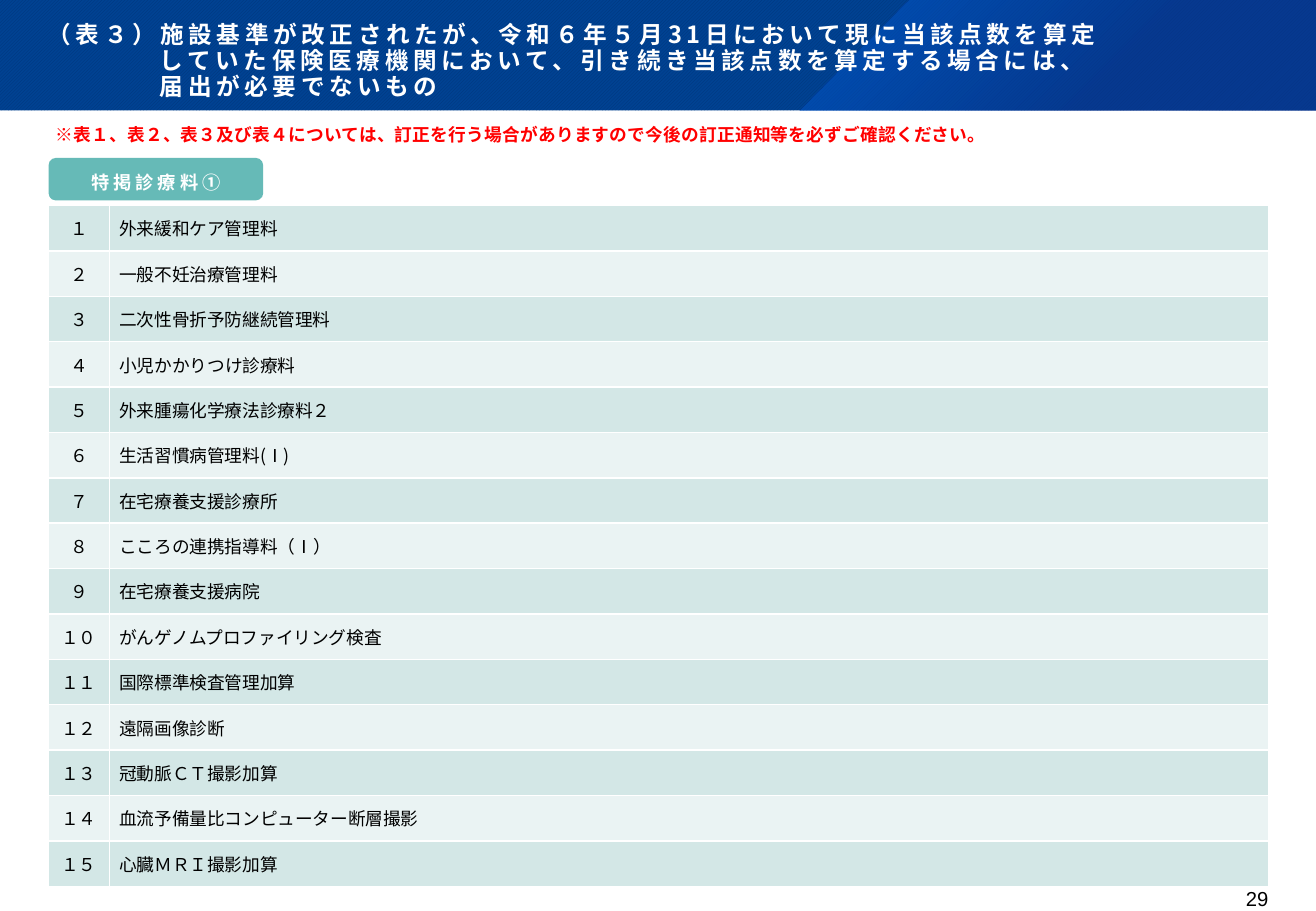
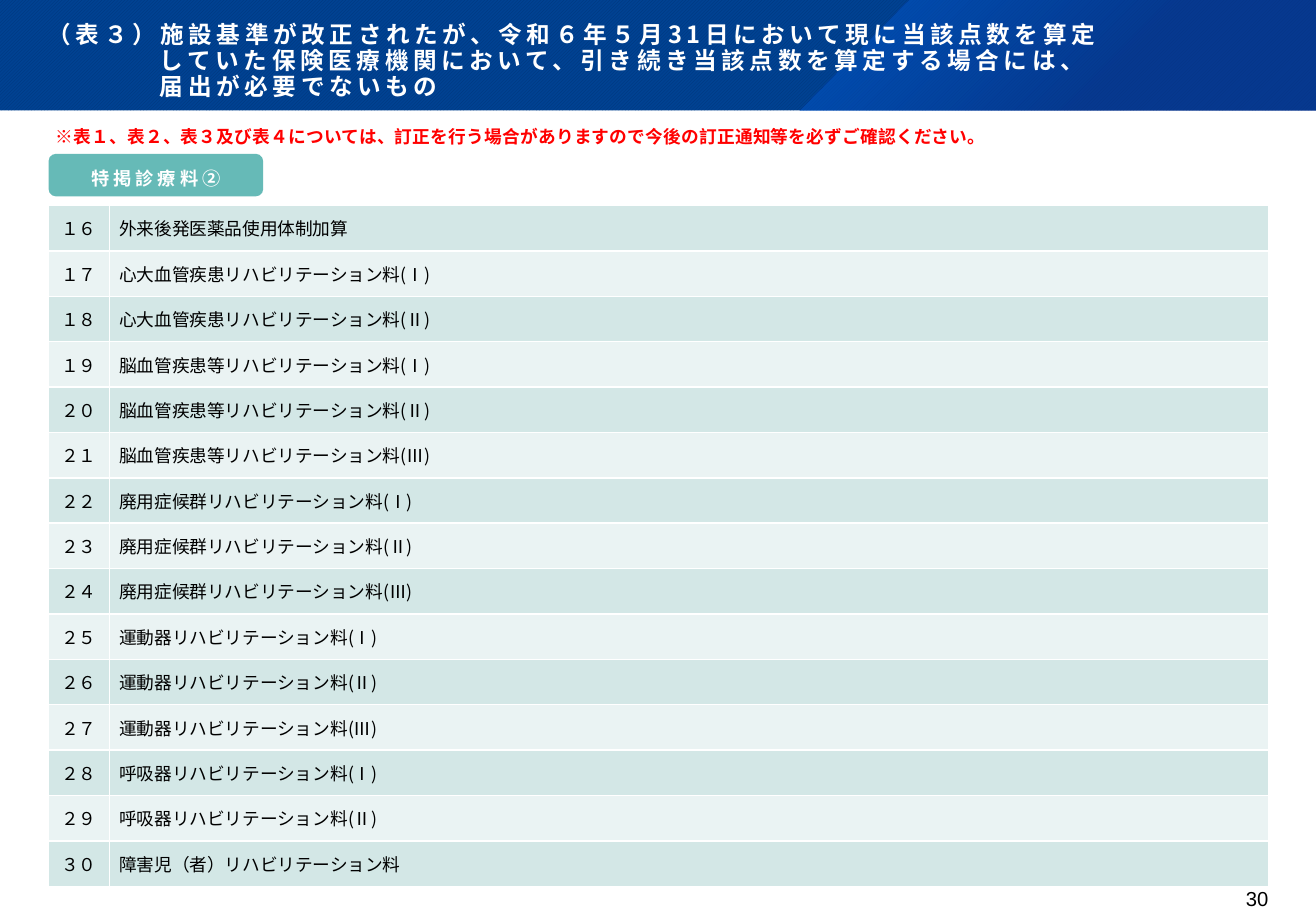
from lxml import etree
from pptx import Presentation
from pptx.dml.color import RGBColor
from pptx.enum.dml import MSO_PATTERN
from pptx.enum.shapes import MSO_SHAPE
from pptx.enum.text import MSO_ANCHOR, MSO_AUTO_SIZE, PP_ALIGN
from pptx.oxml import parse_xml
from pptx.oxml.ns import qn
from pptx.util import Pt

PX = 7620  # 120 px to the inch
WIDTH, HEIGHT, BAND_HEIGHT = 1300, 900, 109
MARGIN = 48

WHITE = RGBColor(0xFF, 0xFF, 0xFF)
BLACK = RGBColor(0, 0, 0)
RED = RGBColor(0xFF, 0, 0)
NAVY = RGBColor(0x00, 0x35, 0x79)
BLUE = RGBColor(0x00, 0x42, 0x92)
TEAL = RGBColor(0x66, 0xBA, 0xB7)
ROW_FILLS = [RGBColor(0xD3, 0xE7, 0xE6), RGBColor(0xEA, 0xF3, 0xF3)]

KARLA, NOTO, ARIAL = "Karla", "Noto Sans CJK JP", "Arial"
LEFT, CENTER, RIGHT, JUSTIFY = PP_ALIGN.LEFT, PP_ALIGN.CENTER, PP_ALIGN.RIGHT, PP_ALIGN.JUSTIFY
MIDDLE, BOTTOM = MSO_ANCHOR.MIDDLE, MSO_ANCHOR.BOTTOM
DRAWING = "http://schemas.openxmlformats.org/drawingml/2006/main"
FULL_WIDTH = str.maketrans("0123456789", "０１２３４５６７８９")

TITLE_LINES = [
    ["（表３）施設基準が改正されたが、令和６年５月", "31", "日において現に当該点数を算定"],
    ["していた保険医療機関において、引き続き当該点数を算定する場合には、"],
    ["届出が必要でないもの"],
]
NOTE = "※表１、表２、表３及び表４については、訂正を行う場合がありますので今後の訂正通知等を必ずご確認ください。"

# A bar divides a fee's name from its grade
PAGES = [
    dict(number=29, label="特掲診療料①", label_top=156, note_top=118, first=1, fees=[
        "外来緩和ケア管理料",
        "一般不妊治療管理料",
        "二次性骨折予防継続管理料",
        "小児かかりつけ診療料",
        "外来腫瘍化学療法診療料２",
        "生活習慣病管理料|(Ⅰ)",
        "在宅療養支援診療所",
        "こころの連携指導料|（Ⅰ）",
        "在宅療養支援病院",
        "がんゲノムプロファイリング検査",
        "国際標準検査管理加算",
        "遠隔画像診断",
        "冠動脈ＣＴ撮影加算",
        "血流予備量比コンピューター断層撮影",
        "心臓ＭＲＩ撮影加算",
    ]),
    dict(number=30, label="特掲診療料②", label_top=152, note_top=120, first=16, fees=[
        "外来後発医薬品使用体制加算",
        "心大血管疾患リハビリテーション料|(Ⅰ)",
        "心大血管疾患リハビリテーション料|(Ⅱ)",
        "脳血管疾患等リハビリテーション料|(Ⅰ)",
        "脳血管疾患等リハビリテーション料|(Ⅱ)",
        "脳血管疾患等リハビリテーション料|(Ⅲ)",
        "廃用症候群リハビリテーション料|(Ⅰ)",
        "廃用症候群リハビリテーション料|(Ⅱ)",
        "廃用症候群リハビリテーション料|(Ⅲ)",
        "運動器リハビリテーション料|(Ⅰ)",
        "運動器リハビリテーション料|(Ⅱ)",
        "運動器リハビリテーション料|(Ⅲ)",
        "呼吸器リハビリテーション料|(Ⅰ)",
        "呼吸器リハビリテーション料|(Ⅱ)",
        "障害児（者）リハビリテーション料",
    ]),
]


def add_span(para, text, font, size, color, bold=False, spacing=0):
    span = para.add_run()
    span.text = text
    span.font.name, span.font.size, span.font.bold = font, Pt(size), bold
    span.font.color.rgb = color
    properties = span.font._element
    if spacing:
        properties.set("spc", str(round(spacing * 100)))
    etree.SubElement(properties, qn("a:ea")).set("typeface", NOTO)


def set_margins(frame, left, top, right, bottom):
    frame.margin_left, frame.margin_top = left * PX, top * PX
    frame.margin_right, frame.margin_bottom = right * PX, bottom * PX


deck = Presentation()
deck.slide_width, deck.slide_height = WIDTH * PX, HEIGHT * PX
layout = deck.slide_layouts[5]
pages = [deck.slides.add_slide(layout) for _ in PAGES]

# Shared title place
title = layout.placeholders[0]
title.left, title.top, title.width, title.height = 0, 0, WIDTH * PX, BAND_HEIGHT * PX
title.text_frame.vertical_anchor = BOTTOM
title.text_frame.auto_size = MSO_AUTO_SIZE.NONE
set_margins(title.text_frame, 47, 43, 43, 10)

# Shared band with its slanted wedge, drawn once and moved to the layout
shapes = pages[0].shapes
band = shapes.add_shape(MSO_SHAPE.RECTANGLE, 0, 0, WIDTH * PX, BAND_HEIGHT * PX)
band.fill.patterned()
band.fill.pattern = MSO_PATTERN.DARK_UPWARD_DIAGONAL
band.fill.fore_color.rgb, band.fill.back_color.rgb = NAVY, BLUE

outline = shapes.build_freeform(899, 0, scale=PX)
outline.add_line_segments([(WIDTH, 0), (WIDTH, BAND_HEIGHT), (790, BAND_HEIGHT)])
wedge = outline.convert_to_shape()
wedge.element.spPr.find(qn("a:custGeom")).addnext(parse_xml(
    f'<a:gradFill xmlns:a="{DRAWING}" rotWithShape="1"><a:gsLst>'
    '<a:gs pos="0"><a:srgbClr val="0064DF"><a:alpha val="50000"/></a:srgbClr></a:gs>'
    '<a:gs pos="62000"><a:srgbClr val="0C338E"><a:alpha val="55000"/></a:srgbClr></a:gs>'
    '</a:gsLst><a:path path="circle"><a:fillToRect r="100000" b="100000"/></a:path></a:gradFill>'))

for position, shape in enumerate([band, wedge], start=2):
    shape.line.fill.background()
    shape.shadow.inherit = False
    layout.shapes.element.insert(position, shape.element)

for page, content in zip(pages, PAGES):
    # Title: later lines line up after the table number
    frame = page.shapes.title.text_frame
    for index, pieces in enumerate(TITLE_LINES):
        para = frame.add_paragraph() if index else frame.paragraphs[0]
        para.alignment, para.line_spacing = LEFT, 0.9
        if index:
            para._p.get_or_add_pPr().set("marL", str(111 * PX))
        for piece in pieces:
            add_span(para, piece, NOTO if piece.isascii() else KARLA, 14, WHITE, True, 2.7)

    # Page number
    box = page.shapes.add_textbox(1170 * PX, 876 * PX, 83 * PX, 36 * PX)
    box.text_frame.word_wrap = True
    set_margins(box.text_frame, 0, 0, 0, 0)
    para = box.text_frame.paragraphs[0]
    para.alignment = RIGHT
    add_span(para, str(content["number"]), ARIAL, 12, BLACK)

    # Section label
    label = page.shapes.add_shape(MSO_SHAPE.ROUNDED_RECTANGLE, MARGIN * PX,
                                  content["label_top"] * PX, 212 * PX, 42 * PX)
    label.adjustments[0] = 0.17
    label.fill.solid()
    label.fill.fore_color.rgb = TEAL
    label.line.fill.background()
    label.shadow.inherit = False
    label.text_frame.vertical_anchor = MIDDLE
    para = label.text_frame.paragraphs[0]
    para.alignment, para.line_spacing, para.space_after = CENTER, 1.3, Pt(8)
    add_span(para, content["label"], NOTO, 10.8, WHITE, True, 2.4)

    # Fee table
    fees = content["fees"]
    table = page.shapes.add_table(len(fees), 2, MARGIN * PX, 203 * PX, 1205 * PX, 673 * PX).table
    table.first_row = table.horz_banding = False
    table.columns[0].width, table.columns[1].width = 60 * PX, 1145 * PX
    for row, fee in enumerate(fees):
        number = str(content["first"] + row).translate(FULL_WIDTH)
        for column, (text, alignment) in enumerate([(number, CENTER), (fee, LEFT)]):
            cell = table.cell(row, column)
            cell.vertical_anchor = MIDDLE
            set_margins(cell, 10, 0, 10, 0)
            para = cell.text_frame.paragraphs[0]
            para.alignment = alignment
            for piece, font in zip(text.split("|"), [KARLA, NOTO]):
                add_span(para, piece, font, 10.5, BLACK)
            properties = cell._tc.get_or_add_tcPr()
            for side in ["lnL", "lnR", "lnT", "lnB"]:
                properties.append(parse_xml(
                    f'<a:{side} xmlns:a="{DRAWING}" w="12700"><a:solidFill>'
                    f'<a:srgbClr val="{WHITE}"/></a:solidFill></a:{side}>'))
            cell.fill.solid()
            cell.fill.fore_color.rgb = ROW_FILLS[row % 2]

    # Red note
    box = page.shapes.add_textbox(MARGIN * PX, content["note_top"] * PX, 917 * PX, 29 * PX)
    box.text_frame.word_wrap = True
    box.text_frame.auto_size = MSO_AUTO_SIZE.SHAPE_TO_FIT_TEXT
    set_margins(box.text_frame, 7, 4, 7, 4)
    para = box.text_frame.paragraphs[0]
    para.alignment, para.space_after = JUSTIFY, Pt(4)
    add_span(para, NOTE, NOTO, 10.5, RED, True)

deck.save("out.pptx")
